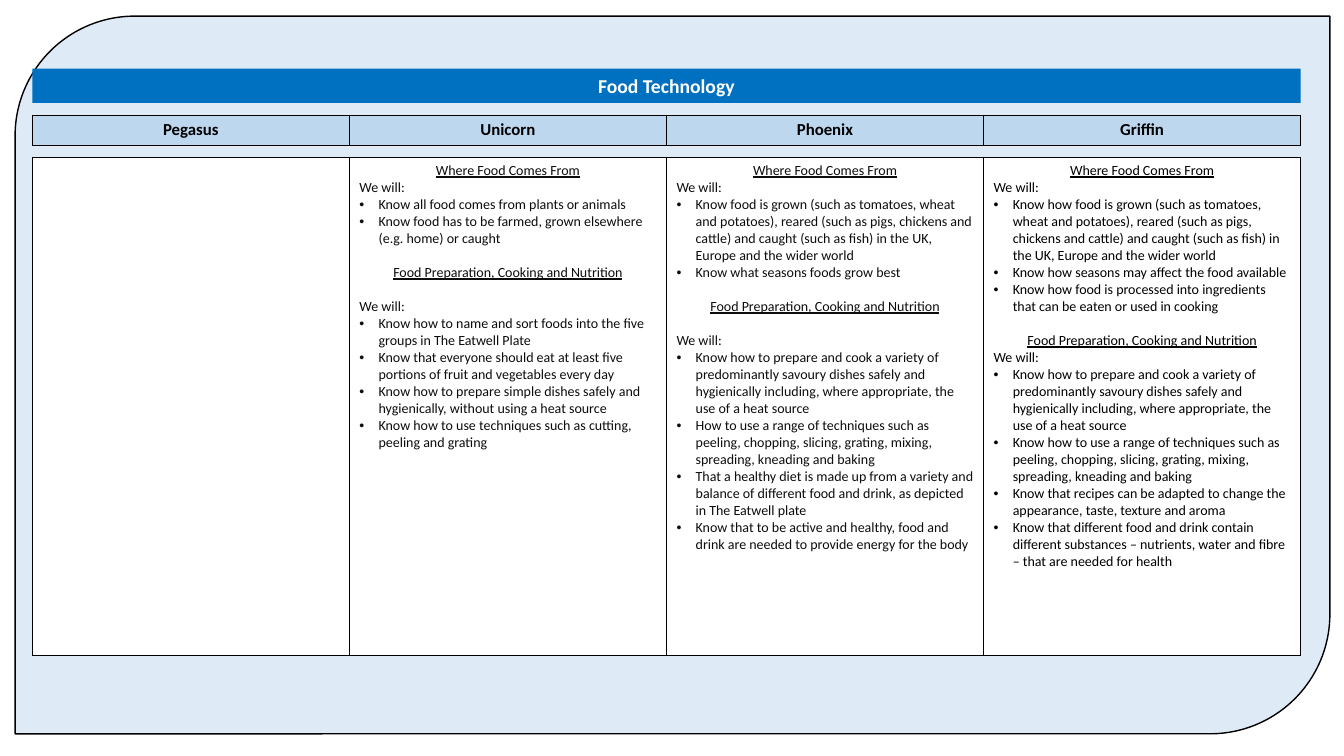
from lxml import etree
from pptx import Presentation, util as u
from pptx.dml.color import RGBColor
from pptx.enum import shapes, text
from pptx.oxml.ns import qn

LEFT, WIDTH = 0.32, 12.58
BLACK, WHITE, INK = "000000", "FFFFFF", "0D0D0D"
BLANK_LINE = 12.2  # points
ORIGINS = "Where Food Comes From"
COOKING = "Food Preparation, Cooking and Nutrition"
COOK_DISHES = ("Know how to prepare and cook a variety of predominantly savoury dishes safely and "
               "hygienically including, where appropriate, the use of a heat source")
TECHNIQUES = ("ow to use a range of techniques such as peeling, chopping, slicing, grating, mixing, "
              "spreading, kneading and baking")
FOOD_SOURCES = ("food is grown (such as tomatoes, wheat and potatoes), reared (such as pigs, chickens "
                "and cattle) and caught (such as fish) in the UK, Europe and the wider world")

# Each class: text colour, gap before the second "We will:", then the two lists
CLASSES = {
    "Pegasus": None,
    "Unicorn": (INK, BLANK_LINE, [
        "Know all food comes from plants or animals",
        "Know food has to be farmed, grown elsewhere (e.g. home) or caught",
    ], [
        "Know how to name and sort foods into the five groups in The Eatwell Plate",
        "Know that everyone should eat at least five portions of fruit and vegetables every day",
        "Know how to prepare simple dishes safely and hygienically, without using a heat source",
        "Know how to use techniques such as cutting, peeling and grating",
    ]),
    "Phoenix": (INK, BLANK_LINE, [
        "Know " + FOOD_SOURCES,
        "Know what seasons foods grow best",
    ], [
        COOK_DISHES,
        "H" + TECHNIQUES,
        "That a healthy diet is made up from a variety and balance of different food and drink, "
        "as depicted in The Eatwell plate",
        "Know that to be active and healthy, food and drink are needed to provide energy for the body",
    ]),
    "Griffin": (BLACK, 0, [
        "Know how " + FOOD_SOURCES,
        "Know how seasons may affect the food available",
        "Know how food is processed into ingredients that can be eaten or used in cooking",
    ], [
        COOK_DISHES,
        "Know h" + TECHNIQUES,
        "Know that recipes can be adapted to change the appearance, taste, texture and aroma",
        "Know that different food and drink contain different substances – nutrients, water and "
        "fibre – that are needed for health",
    ]),
}


def colour(value):
    return RGBColor.from_string(value)


class SlideBuilder:
    font = "Calibri"

    def __init__(self, presentation):
        self.slide = presentation.slides.add_slide(presentation.slide_layouts[5])

    def set_text(self, paragraph, words, size, ink, bold=False, underline=False, centred=False):
        paragraph.text = words
        paragraph.alignment = text.PP_ALIGN.CENTER if centred else text.PP_ALIGN.LEFT
        for run in paragraph.runs:
            font = run.font
            font.name, font.size, font.bold, font.underline = self.font, u.Pt(size), bold, underline
            font.color.rgb = colour(ink)

    def panel(self, left, top, width, height, fill):
        shape = self.slide.shapes.add_shape(
            shapes.MSO_SHAPE.ROUND_2_DIAG_RECTANGLE, *map(u.Inches, (left, top, width, height)))
        shape.shadow.inherit = False
        shape.fill.solid()
        shape.fill.fore_color.rgb = colour(fill)
        shape.line.color.rgb = colour(BLACK)
        shape.line.width = u.Pt(1)
        # Keep the panel behind the title placeholder
        self.slide.shapes.title.element.addprevious(shape.element)

    def title(self, words, top, height, fill):
        title = self.slide.shapes.title
        title.left, title.top, title.width, title.height = map(u.Inches, (LEFT, top, WIDTH, height))
        title.fill.solid()
        title.fill.fore_color.rgb = colour(fill)
        frame = title.text_frame
        frame.auto_size = text.MSO_AUTO_SIZE.NONE
        frame.vertical_anchor = text.MSO_ANCHOR.MIDDLE
        self.set_text(frame.paragraphs[0], words, 14, WHITE, bold=True, centred=True)

    def table(self, top, height, fill):
        """Add a one-row table with a column for each class and return its cells."""
        table = self.slide.shapes.add_table(
            1, len(CLASSES), *map(u.Inches, (LEFT, top, WIDTH, height))).table
        table.first_row = table.horz_banding = False
        cells = list(table.iter_cells())
        for cell in cells:
            self.border(cell)
            cell.fill.solid()
            cell.fill.fore_color.rgb = colour(fill)
        return cells

    def border(self, cell):
        properties = cell._tc.get_or_add_tcPr()
        for side in ("lnL", "lnR", "lnT", "lnB"):
            line = etree.SubElement(properties, qn("a:" + side), w=str(u.Pt(0.5)))
            fill = etree.SubElement(line, qn("a:solidFill"))
            etree.SubElement(fill, qn("a:srgbClr"), val=BLACK)

    def bullet(self, paragraph):
        properties = paragraph._p.get_or_add_pPr()
        indent = u.Inches(0.19)
        properties.set("marL", str(indent))
        properties.set("indent", str(-indent))
        etree.SubElement(properties, qn("a:buFont"), typeface="Arial")
        etree.SubElement(properties, qn("a:buChar"), char="•")

    def section(self, frame, heading, items, ink, before, after):
        if frame.text:
            paragraph = frame.add_paragraph()
        else:
            paragraph = frame.paragraphs[0]
        self.set_text(paragraph, heading, 10, ink, underline=True, centred=True)
        paragraph.space_before, paragraph.space_after = u.Pt(before), u.Pt(after)
        self.set_text(frame.add_paragraph(), "We will:", 10, ink)
        for item in items:
            paragraph = frame.add_paragraph()
            self.set_text(paragraph, item, 10, ink)
            self.bullet(paragraph)


def main():
    presentation = Presentation()
    presentation.slide_width, presentation.slide_height = u.Inches(13.33), u.Inches(7.5)
    builder = SlideBuilder(presentation)

    # Background panel and title bar
    builder.panel(0.15, 0.16, 13.04, 7.12, "DEEBF7")
    builder.title("Food Technology", 0.68, 0.34, "0070C0")

    # Class names
    for cell, name in zip(builder.table(1.14, 0.3, "BDD7EE"), CLASSES):
        builder.set_text(cell.text_frame.paragraphs[0], name, 12, BLACK, bold=True, centred=True)

    # What each class will learn
    for cell, content in zip(builder.table(1.56, 4.94, WHITE), CLASSES.values()):
        if content:
            ink, gap, origins, cooking = content
            builder.section(cell.text_frame, ORIGINS, origins, ink, 0, 0)
            builder.section(cell.text_frame, COOKING, cooking, ink, BLANK_LINE, gap)

    presentation.save("out.pptx")


if __name__ == "__main__":
    main()
